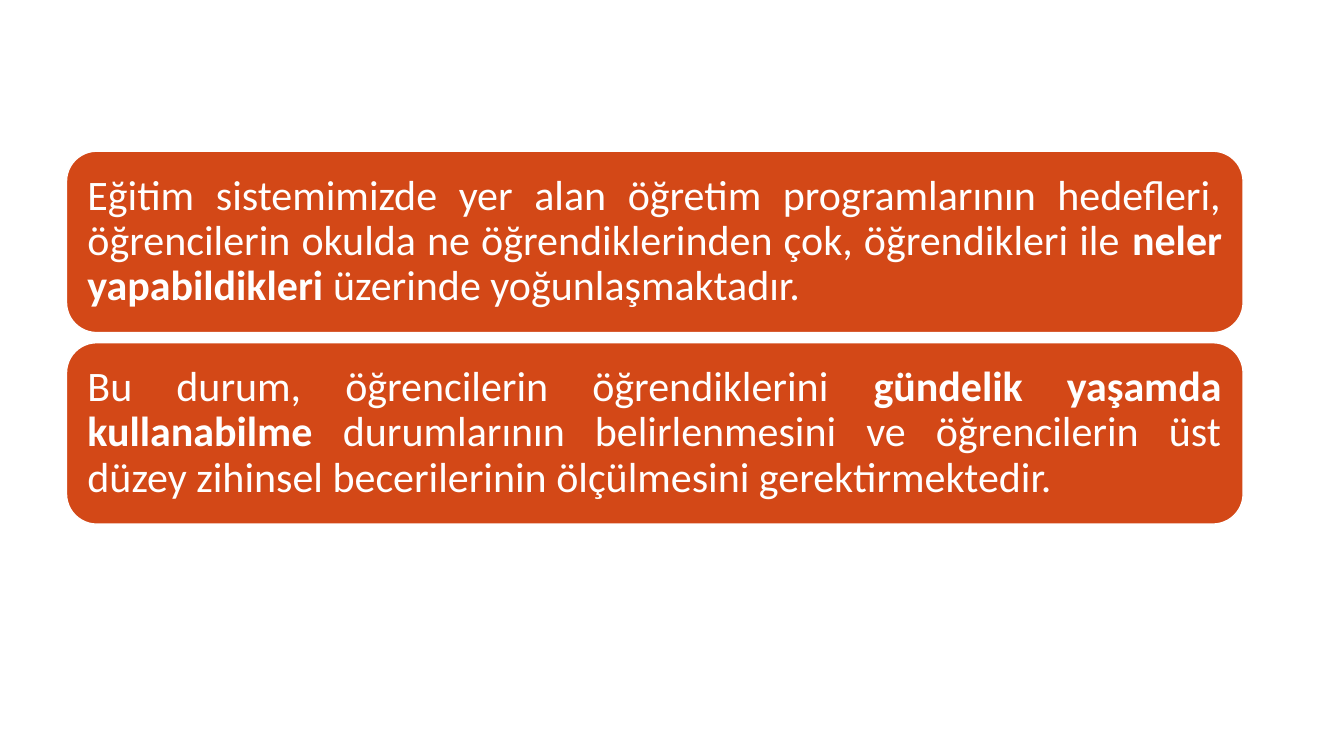
from pptx import Presentation
from pptx.dml.color import RGBColor
from pptx.enum.shapes import MSO_SHAPE
from pptx.enum.text import MSO_ANCHOR, PP_ALIGN
from pptx.util import Emu, Pt

EMU_PER_PX = 9144
COLORS = {"panel": "D34817", "white": "FFFFFF"}

STATEMENTS = [
    [
        ("Eğitim sistemimizde yer alan öğretim programlarının hedefleri, "
         "öğrencilerin okulda ne öğrendiklerinden çok, öğrendikleri ile ", False),
        ("neler yapabildikleri ", True),
        ("üzerinde yoğunlaşmaktadır.", False),
    ],
    [
        ("Bu durum, öğrencilerin öğrendiklerini ", False),
        ("gündelik yaşamda kullanabilme ", True),
        ("durumlarının belirlenmesini ve öğrencilerin üst düzey zihinsel "
         "becerilerinin ölçülmesini gerektirmektedir.", False),
    ],
]


def px(length):
    return Emu(length * EMU_PER_PX)


def color(name):
    return RGBColor.from_string(COLORS[name])


class SlideBuilder:
    font_name = "Calibri"
    font_size = Pt(30)
    inset = px(12)

    def __init__(self, slide):
        self.slide = slide

    def panel(self, left, top, width, height, runs):
        panel = self.slide.shapes.add_shape(
            MSO_SHAPE.ROUNDED_RECTANGLE, px(left), px(top), px(width), px(height))
        panel.shadow.inherit = False
        panel.fill.solid()
        panel.fill.fore_color.rgb = color("panel")
        panel.line.color.rgb = color("white")
        panel.line.width = Pt(1)
        self.statement(panel.text_frame, runs)

    def statement(self, frame, runs):
        frame.word_wrap = True
        frame.vertical_anchor = MSO_ANCHOR.MIDDLE
        frame.margin_left = frame.margin_right = self.inset
        frame.margin_top = frame.margin_bottom = self.inset
        paragraph = frame.paragraphs[0]
        paragraph.alignment = PP_ALIGN.JUSTIFY
        paragraph.line_spacing = 0.9
        paragraph.font.name = self.font_name
        paragraph.font.size = self.font_size
        paragraph.font.color.rgb = color("white")
        for text, bold in runs:
            run = paragraph.add_run()
            run.text = text
            run.font.bold = bold


def main():
    presentation = Presentation()
    presentation.slide_width = px(1333)
    presentation.slide_height = px(750)
    builder = SlideBuilder(
        presentation.slides.add_slide(presentation.slide_layouts[6]))

    panel_height, gap = 180, 10
    for row, runs in enumerate(STATEMENTS):
        builder.panel(66, 150 + row * (panel_height + gap), 1167, panel_height, runs)

    presentation.save("out.pptx")


if __name__ == "__main__":
    main()
